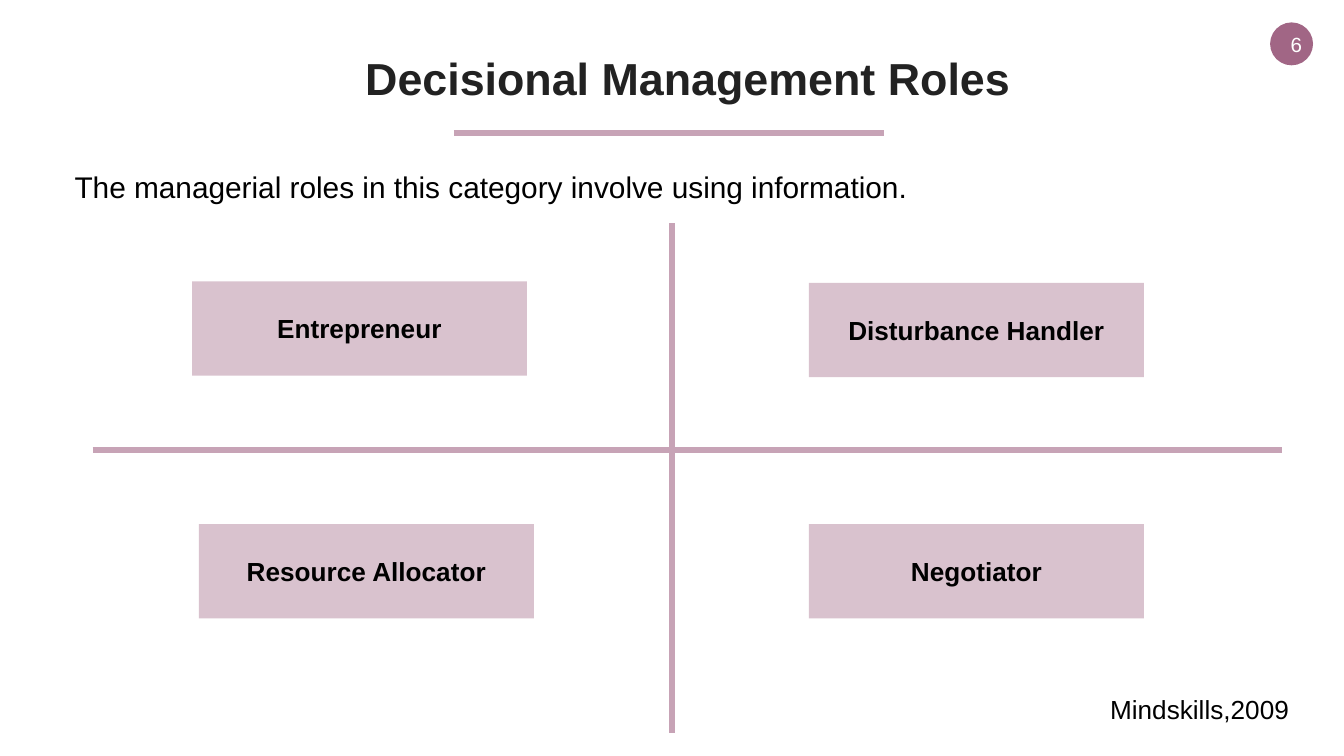
from lxml import etree
from pptx import Presentation
from pptx.dml.color import RGBColor
from pptx.enum.shapes import MSO_CONNECTOR, MSO_SHAPE
from pptx.enum.text import MSO_ANCHOR, PP_ALIGN
from pptx.oxml.ns import qn
from pptx.util import Cm, Pt

RECTANGLE, OVAL = MSO_SHAPE.RECTANGLE, MSO_SHAPE.OVAL
STRAIGHT = MSO_CONNECTOR.STRAIGHT
LEFT, CENTER = PP_ALIGN.LEFT, PP_ALIGN.CENTER
TOP, MIDDLE = MSO_ANCHOR.TOP, MSO_ANCHOR.MIDDLE

FONT = "Arial"
BLACK, WHITE, TITLE_INK = "000000", "FFFFFF", "222222"
CARD_PINK, RULE_PINK, BADGE_PLUM = "D9C2CE", "C7A3B6", "A16685"

CARD_WIDTH, CARD_HEIGHT = 6.33, 1.78
ROLES = [  # label, left, top
    ("Entrepreneur", 3.63, 5.32),
    ("Disturbance Handler", 15.29, 5.35),
    ("Resource Allocator", 3.76, 9.91),
    ("Negotiator", 15.29, 9.91),
]
RULES = [  # start x, start y, end x, end y
    (8.58, 2.51, 16.71, 2.51),   # under the title
    (1.75, 8.51, 24.23, 8.51),   # between the rows
    (12.7, 4.22, 12.7, 13.85),   # between the columns
]


def color(hex_value):
    return RGBColor.from_string(hex_value)


def write(shape, text, size, ink=BLACK, bold=False, align=LEFT, anchor=TOP, wrap=True):
    frame = shape.text_frame
    frame.word_wrap = wrap
    frame.vertical_anchor = anchor
    paragraph = frame.paragraphs[0]
    paragraph.alignment = align
    run = paragraph.add_run()
    run.text = text
    run.font.name = FONT
    run.font.size = Pt(size)
    run.font.bold = bold
    run.font.color.rgb = color(ink)


def place_title(slide, text):
    title = slide.shapes.title
    title.left, title.top, title.width, title.height = Cm(6.58), Cm(0.84), Cm(12.83), Cm(1.27)
    write(title, text, 24, TITLE_INK, bold=True, align=CENTER, wrap=False)


def add_note(slide, text, left, top, width, height, size):
    note = slide.shapes.add_textbox(Cm(left), Cm(top), Cm(width), Cm(height))
    write(note, text, size)


def add_filled(slide, preset, left, top, width, height, fill):
    shape = slide.shapes.add_shape(preset, Cm(left), Cm(top), Cm(width), Cm(height))
    shape.shadow.inherit = False
    shape.fill.solid()
    shape.fill.fore_color.rgb = color(fill)
    shape.line.fill.background()
    return shape


def add_rule(slide, *ends):
    rule = slide.shapes.add_connector(STRAIGHT, *map(Cm, ends))
    rule.line.color.rgb = color(RULE_PINK)
    rule.line.width = Pt(3)
    etree.SubElement(rule._element.spPr, qn("a:effectLst"))


def add_role_card(slide, label, left, top):
    card = add_filled(slide, RECTANGLE, left, top, CARD_WIDTH, CARD_HEIGHT, CARD_PINK)
    write(card, label, 14, bold=True, align=CENTER, anchor=MIDDLE)


def add_page_badge(slide, number):
    badge = add_filled(slide, OVAL, 24.04, 0.46, 0.74, 0.74, BADGE_PLUM)
    badge.line.color.rgb = color(BADGE_PLUM)
    badge.line.width = Pt(2)
    frame = badge.text_frame
    frame.margin_right = frame.margin_top = frame.margin_bottom = 0
    frame.margin_left = Cm(0.18)  # the number sits right of centre
    write(badge, number, 11, WHITE, align=CENTER, anchor=MIDDLE)


def main():
    deck = Presentation()
    deck.slide_width, deck.slide_height = Cm(25.4), Cm(14.29)
    slide = deck.slides.add_slide(deck.slide_layouts[5])

    # Heading
    place_title(slide, "Decisional Management Roles")
    add_page_badge(slide, "6")
    add_note(slide, "The managerial roles in this category involve using information.",
             1.16, 3.07, 17.3, 0.94, 16)

    # Title underline and quadrant cross
    for ends in RULES:
        add_rule(slide, *ends)

    # One role in each quadrant
    for role in ROLES:
        add_role_card(slide, *role)

    # Citation, on a single line
    add_note(slide, "Mindskills,2009", 20.73, 12.98, 4.3, 0.86, 14)

    deck.save("out.pptx")


if __name__ == "__main__":
    main()
